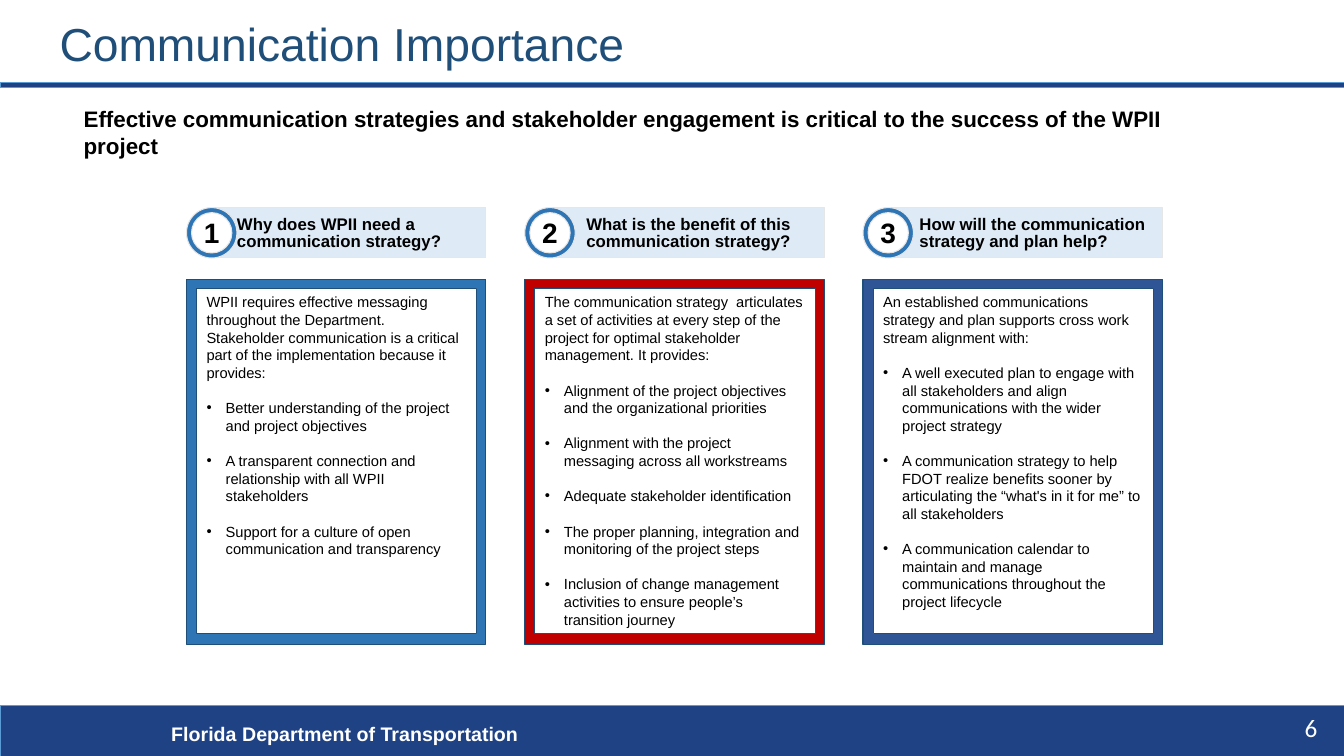
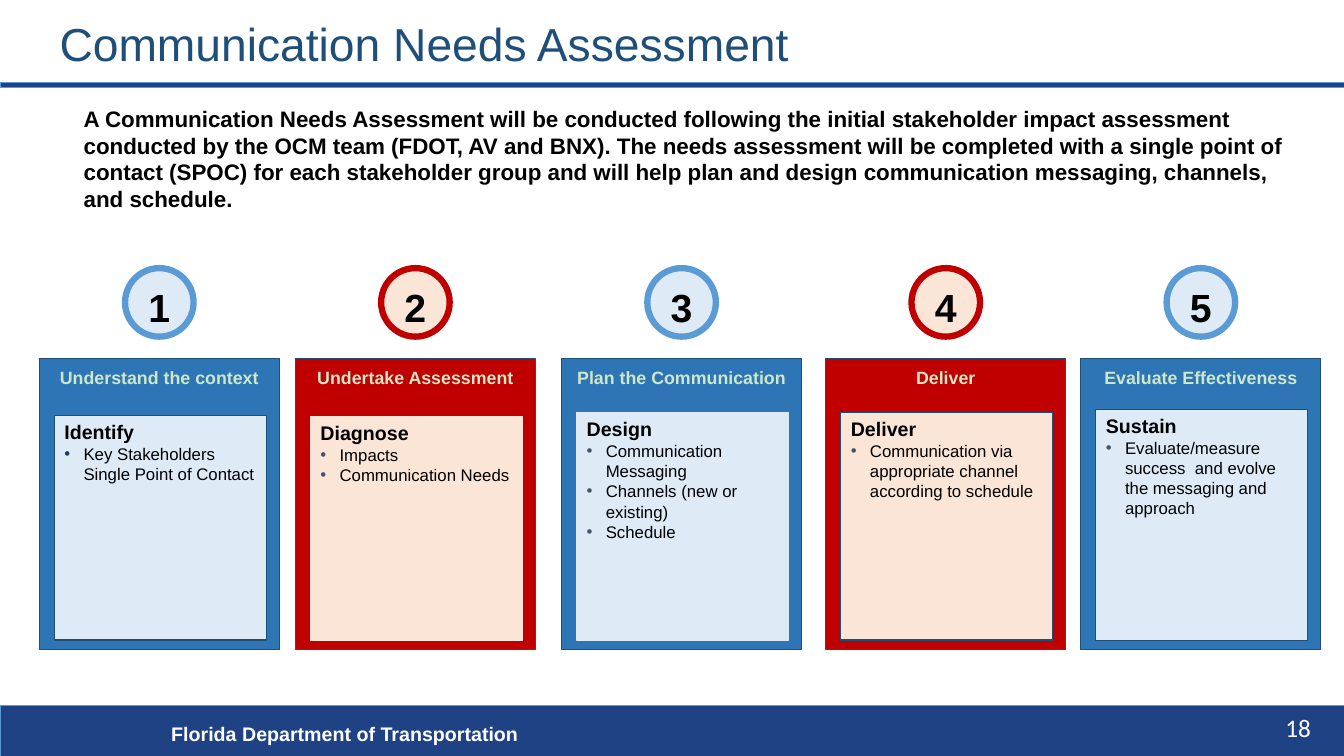
"""Build two slides on communication importance and needs assessment."""
from dataclasses import dataclass

from lxml import etree
from pptx import Presentation
from pptx.dml.color import RGBColor
from pptx.enum import shapes, text
from pptx.oxml import ns
from pptx.util import Inches, Pt


@dataclass(frozen=True)
class Theme:
    """Hold the colours, fonts and type sizes."""
    navy: str = "1F4284"
    edge: str = "1F4E79"
    blue: str = "2E75B6"
    deep: str = "2F5597"
    sky: str = "5B9BD5"
    pale: str = "DEEBF7"
    red: str = "C00000"
    peach: str = "FBE5D6"
    mint: str = "CDE7C7"
    grey: str = "E6E6E6"
    slate: str = "44546A"
    ink: str = "203864"
    black: str = "000000"
    white: str = "FFFFFF"
    sans: str = "Arial"
    page: str = "Calibri"
    title: float = 33
    digit: float = 28
    step: float = 20
    num: float = 18
    lead: float = 16
    head: float = 14
    label: float = 12.7
    body: float = 12
    small: float = 10.5
    gap: float = 12.6


T = Theme()
BOX, OVAL = shapes.MSO_SHAPE.RECTANGLE, shapes.MSO_SHAPE.OVAL
TOP, MID = text.MSO_ANCHOR.TOP, text.MSO_ANCHOR.MIDDLE
LEFT, CENTER = text.PP_ALIGN.LEFT, text.PP_ALIGN.CENTER
AGENCY = "Florida Department of Transportation"

WHY = {
    "title": "Communication Importance",
    "lead": "Effective communication strategies and stakeholder engagement is critical "
            "to the success of the WPII project",
    "wide": 11.16, "page": "6", "left": 12.84,
}
REASONS = [
    ("Why does WPII need a communication strategy?", 0.25, T.blue,
     "WPII requires effective messaging throughout the Department. Stakeholder "
     "communication is a critical part of the implementation because it provides:",
     ["Better understanding of the project and project objectives",
      "A transparent connection and relationship with all WPII stakeholders",
      "Support for a culture of open communication and transparency"]),
    ("What is the benefit of this communication strategy?", 0.36, T.red,
     "The communication strategy  articulates a set of activities at every step of "
     "the project for optimal stakeholder management. It provides:",
     ["Alignment of the project objectives and the organizational priorities",
      "Alignment with the project messaging across all workstreams",
      "Adequate stakeholder identification",
      "The proper planning, integration and monitoring of the project steps",
      "Inclusion of change management activities to ensure people’s transition journey"]),
    ("How will the communication strategy and plan help?", 0.31, T.deep,
     "An established communications strategy and plan supports cross work stream "
     "alignment with:",
     ["A well executed plan to engage with all stakeholders and align communications "
      "with the wider project strategy",
      "A communication strategy to help FDOT realize benefits sooner by articulating "
      "the “what's in it for me” to all stakeholders",
      "A communication calendar to maintain and manage communications throughout the "
      "project lifecycle"]),
]
NEEDS = {
    "title": "Communication Needs Assessment",
    "lead": "A Communication Needs Assessment will be conducted following the initial "
            "stakeholder impact assessment conducted by the OCM team (FDOT, AV and BNX). "
            "The needs assessment will be completed with a single point of contact (SPOC) "
            "for each stakeholder group and will help plan and design communication "
            "messaging, channels, and schedule.",
    "wide": 12.14, "page": "18", "left": 12.65,
}
STEPS = [
    (0.39, "Understand the context", "Identify", 4.12, T.edge, T.ink,
     ["Key Stakeholders"], ["Single Point of Contact"]),
    (2.93, "Undertake Assessment", "Diagnose", 4.13, T.peach, T.slate,
     ["Impacts", "Communication Needs"], []),
    (5.57, "Plan the Communication", "Design", 4.09, T.pale, T.slate,
     ["Communication Messaging", "Channels (new or existing)", "Schedule"], []),
    (8.19, "Deliver", "Deliver", 4.09, T.edge, T.slate,
     ["Communication via appropriate channel according to schedule"], []),
    (10.72, "Evaluate Effectiveness", "Sustain", 4.06, T.edge, T.slate,
     ["Evaluate/measure success  and evolve the messaging and approach"], []),
]
TONES = [(T.blue, T.pale, T.sky), (T.red, T.peach, T.red)]


def rgb(code):
    """Turn a hex code into a colour."""
    return RGBColor.from_string(code)


def put(item, values):
    """Set each attribute named in a dict."""
    for key, value in values.items():
        setattr(item, key, value)


def para(words, size, color=T.black, **more):
    """Describe one paragraph."""
    base = {"words": words, "size": size, "color": color, "bold": False,
            "font": T.sans, "dent": 0, "dot": None, "form": {}}
    return base | more


def dent(item, depth, dot):
    """Indent a paragraph and give it a bullet if a colour is set."""
    props = item._p.get_or_add_pPr()
    props.set("marL", str(Inches(depth)))
    props.set("indent", str(-Inches(depth) if dot else 0))
    if dot:
        tint = etree.SubElement(props, ns.qn("a:buClr"))
        etree.SubElement(tint, ns.qn("a:srgbClr"), val=dot)
        etree.SubElement(props, ns.qn("a:buFont"), typeface=T.sans)
        etree.SubElement(props, ns.qn("a:buChar"), char="•")


def write(shape, paras, pad=(0.1, 0.05, 0.1, 0.05), anchor=TOP, wrap=True):
    """Fill a shape with formatted paragraphs."""
    frame = shape.text_frame
    sides = ("margin_left", "margin_top", "margin_right", "margin_bottom")
    put(frame, dict(zip(sides, map(Inches, pad))))
    put(frame, {"word_wrap": wrap, "vertical_anchor": anchor,
                "auto_size": text.MSO_AUTO_SIZE.NONE})
    for i, part in enumerate(paras):
        item = frame.add_paragraph() if i else frame.paragraphs[0]
        if part["dent"]:
            dent(item, part["dent"], part["dot"])
        put(item, {"alignment": LEFT} | part["form"])
        run = item.add_run()
        run.text = part["words"]
        put(run.font, {"size": Pt(part["size"]), "bold": part["bold"],
                       "name": part["font"]})
        run.font.color.rgb = rgb(part["color"])


def block(slide, kind, at, fill, line, width=0.75):
    """Add a filled and outlined shape."""
    shape = slide.shapes.add_shape(kind, *map(Inches, at))
    shape.shadow.inherit = False
    shape.fill.solid()
    shape.fill.fore_color.rgb = rgb(fill)
    shape.line.color.rgb = rgb(line)
    shape.line.width = Pt(width)
    return shape


def label(slide, at, part, **more):
    """Add a text box with one paragraph."""
    write(slide.shapes.add_textbox(*map(Inches, at)), [part], **more)


def start(deck, data):
    """Add a slide with its title, bands, lead text and footer."""
    slide = deck.slides.add_slide(deck.slide_layouts[5])
    block(slide, BOX, (0, 7, 13.33, 0.5), T.navy, T.sky, 0.5)
    block(slide, BOX, (0, 0.82, 13.33, 0.05), T.navy, T.sky, 0.5)
    label(slide, (1.6, 7.11, 7.98, 0.34), para(AGENCY, T.head, T.white, bold=True))
    label(slide, (data["left"], 7.02, 0.46, 0.4),
          para(data["page"], T.num, T.white, font=T.page))
    title = slide.shapes.title
    put(title, dict(zip(("left", "top", "width", "height"),
                        map(Inches, (0.49, 0.1, 11.5, 0.72)))))
    write(title, [para(data["title"], T.title, T.edge, form={"line_spacing": 0.9})],
          anchor=MID)
    label(slide, (0.83, 1.04, data["wide"], 1.2),
          para(data["lead"], T.lead, bold=True), pad=(0, 0, 0, 0))
    return slide


def reasons(slide):
    """Draw the three numbered reason columns."""
    first, last, wide = 1.85, 8.56, 2.97
    pitch = (last - first) / (len(REASONS) - 1)
    for i, (ask, inset, color, intro, points) in enumerate(REASONS):
        x = first + i * pitch
        band = block(slide, BOX, (x + 0.25, 2.06, wide - 0.25, 0.5), T.pale, T.grey)
        write(band, [para(ask, T.body, bold=True, form={"line_spacing": 0.85})],
              pad=(inset, 0.02, 0, 0), anchor=MID)
        block(slide, OVAL, (x, 2.06, 0.5, 0.5), T.blue, T.grey)
        disc = block(slide, OVAL, (x + 0.05, 2.11, 0.4, 0.4), T.white, T.grey)
        write(disc, [para(str(i + 1), T.step, bold=True, form={"alignment": CENTER})],
              pad=(0, 0, 0, 0), anchor=MID, wrap=False)
        block(slide, BOX, (x, 2.77, wide, 3.62), color, T.edge)
        panel = block(slide, BOX, (x + 0.1, 2.86, wide - 0.19, 3.43), T.white, T.edge)
        form = {"space_before": Pt(T.gap)}
        write(panel, [para(intro, T.small)] + [
            para(p, T.small, dent=0.19, dot=T.black, form=form) for p in points])


def steps(slide):
    """Draw the five numbered step cards."""
    wide, ring, foot = 2.38, 0.68, 6.35
    for i, (x, name, head, top, line, dot, points, tail) in enumerate(STEPS):
        fill, tint, rim = TONES[i % 2]
        disc = block(slide, OVAL, (x + (wide - ring) / 2, 2.66, ring, ring),
                     tint, rim, 4.5)
        write(disc, [para(str(i + 1), T.digit, bold=True, form={"alignment": CENTER})])
        card = block(slide, BOX, (x, 3.56, wide, 2.88), fill, T.edge)
        write(card, [para(name, T.label, T.mint, bold=True,
                          form={"alignment": CENTER, "line_spacing": 0.95})],
              pad=(0.1, 0.09, 0.1, 0.04))
        panel = block(slide, BOX, (x + 0.15, top, 2.1, foot - top), tint, line)
        write(panel, [para(head, T.head, bold=True)]
              + [para(p, T.body, dent=0.19, dot=dot) for p in points]
              + [para(p, T.body, dent=0.19) for p in tail])


def main():
    """Build and save the deck."""
    deck = Presentation()
    put(deck, {"slide_width": Inches(13.33), "slide_height": Inches(7.5)})
    reasons(start(deck, WHY))
    steps(start(deck, NEEDS))
    deck.save("out.pptx")


if __name__ == "__main__":
    main()
